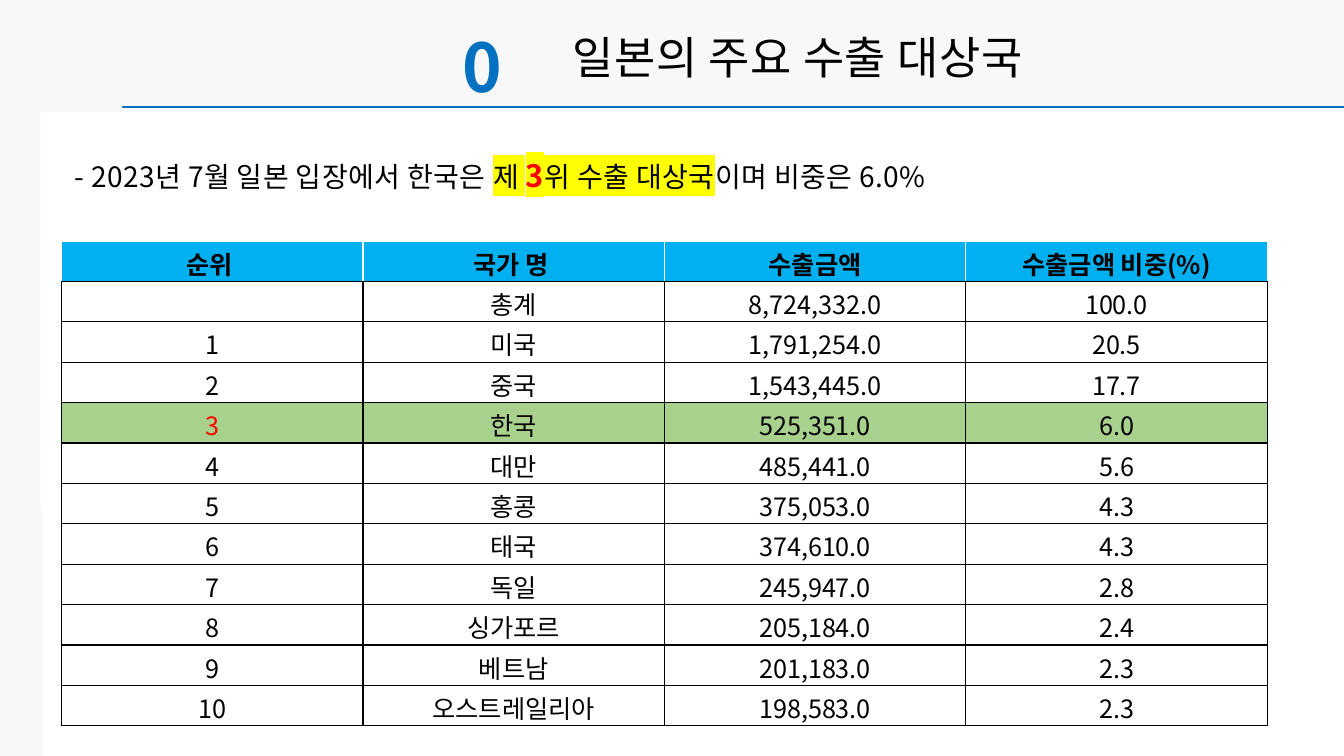
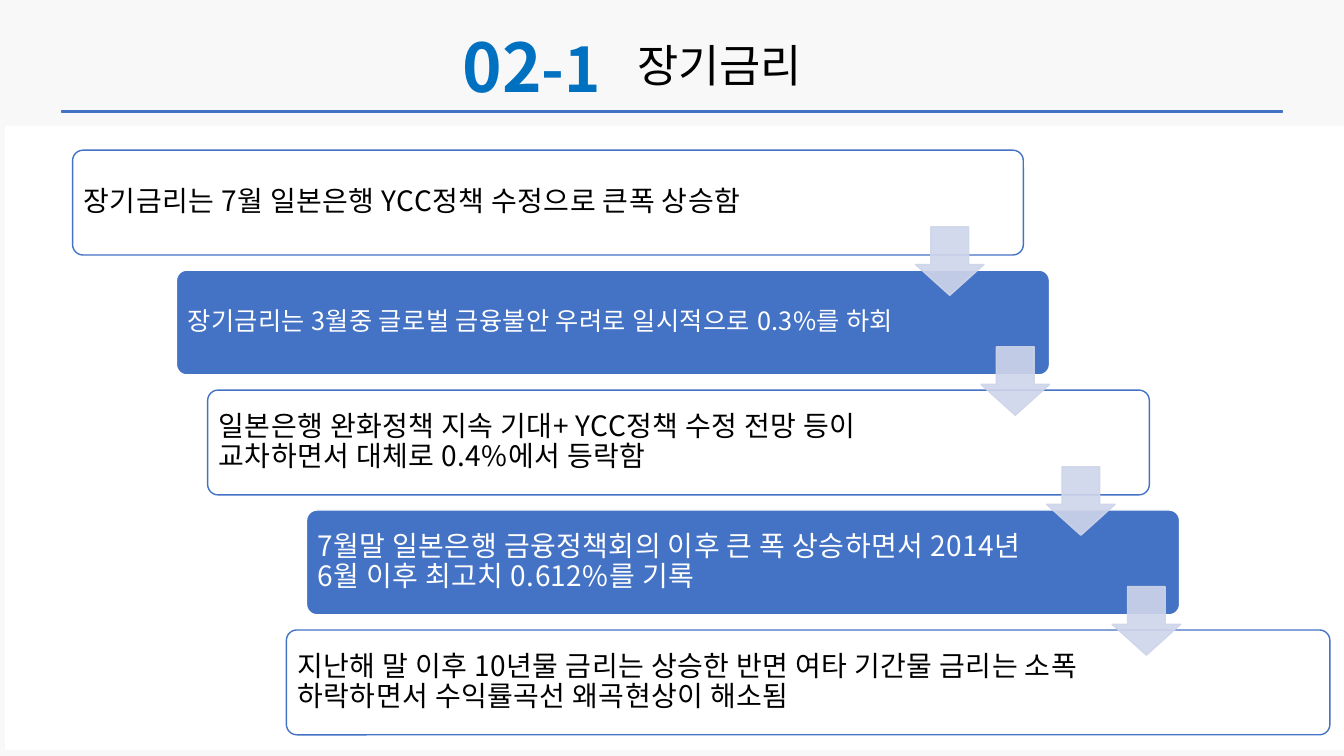
from lxml import etree
from pptx import Presentation
from pptx.dml.color import RGBColor
from pptx.enum.shapes import MSO_SHAPE as Preset
from pptx.enum.text import MSO_ANCHOR as Anchor, PP_ALIGN as Align
from pptx.oxml.ns import qn
from pptx.util import Inches, Pt

FONT = "Noto Sans CJK KR"
COLORS = {
    "backdrop": "F8F8F8", "panel": "FFFFFF", "text": "000000", "number": "0070C0",
    "blue": "4472C4", "arrow": "CFD5EA", "alert": "FF0000", "marker": "FFFF00",
    "header": "00B0F0", "korea": "A9D18E",
}

# Content
EXPORT_SUMMARY = [
    ("- 2023년 7월 일본 입장에서 한국은 ", {}),
    ("제 ", {"highlight": "marker"}),
    ("3", {"size": 22, "color": "alert", "bold": True, "highlight": "marker"}),
    ("위 수출 대상국", {"highlight": "marker"}),
    ("이며 비중은 6.0%", {}),
]
EXPORT_HEADER = ("순위 ", "국가 명 ", "수출금액", "수출금액 비중(%)")
EXPORT_ROWS = [
    ("", "총계", "8,724,332.0", "100.0"),
    ("1", "미국", "1,791,254.0", "20.5"),
    ("2", "중국", "1,543,445.0", "17.7"),
    ("3", "한국", "525,351.0", "6.0"),
    ("4", "대만", "485,441.0", "5.6"),
    ("5", "홍콩", "375,053.0", "4.3"),
    ("6", "태국", "374,610.0", "4.3"),
    ("7", "독일", "245,947.0", "2.8"),
    ("8", "싱가포르", "205,184.0", "2.4"),
    ("9", "베트남", "201,183.0", "2.3"),
    ("10", "오스트레일리아", "198,583.0", "2.3"),
]
# Each step: left, width, text width, text size, text
RATE_STEPS = [
    (0.72, 9.43, 8.07, 20, "장기금리는 7월 일본은행 YCC정책 수정으로 큰폭 상승함"),
    (1.75, 8.66, 7.27, 18, "장기금리는 3월중 글로벌 금융불안 우려로 일시적으로 0.3%를 하회"),
    (2.06, 9.34, 7.85, 20,
     "일본은행 완화정책 지속 기대+ YCC정책 수정 전망 등이 교차하면서 대체로 0.4%에서 등락함"),
    (3.04, 8.66, 7.27, 20,
     "7월말 일본은행 금융정책회의 이후 큰 폭 상승하면서 2014년 6월 이후 최고치 0.612%를 기록"),
    (2.84, 10.35, 8.7, 20,
     "지난해 말 이후 10년물 금리는 상승한 반면 여타 기간물 금리는 소폭 하락하면서 "
     "수익률곡선 왜곡현상이 해소됨"),
]
STEP_TOP, STEP_PITCH, STEP_HEIGHT = 1.49, 1.19, 1.04
ARROW_LEFT, ARROW_TOP, ARROW_SHIFT, ARROW_SIZE = 9.08, 2.25, 0.65, 0.68
BODY_TRACKING, TITLE_TRACKING = 0.28, 0.45
TABLE_HEIGHT = 4.81


def rgb(name):
    return RGBColor.from_string(COLORS[name])


def add_color(parent, name):
    fill = etree.SubElement(parent, qn("a:solidFill"))
    etree.SubElement(fill, qn("a:srgbClr")).set("val", COLORS[name])


def write(frame, spans, size=20, color="text", bold=False, align=Align.LEFT, tracking=0,
          spacing=None, anchor=Anchor.TOP, insets=(0.1, 0.05, 0.1, 0.05)):
    """Fill a text frame with one paragraph of (text, format) spans."""
    frame.word_wrap = True
    frame.vertical_anchor = anchor
    (frame.margin_left, frame.margin_top,
     frame.margin_right, frame.margin_bottom) = map(Inches, insets)
    para = frame.paragraphs[0]
    para.alignment = align
    if spacing:
        para.line_spacing = spacing
    for text, style in [(spans, {})] if isinstance(spans, str) else spans:
        span = para.add_run()
        span.text = text
        span.font.size = Pt(style.get("size", size))
        span.font.bold = style.get("bold", bold)
        span.font.color.rgb = rgb(style.get("color", color))
        span.font.name = FONT
        properties = span.font._element
        if tracking:
            properties.set("spc", str(round(tracking * 100)))
        latin = properties.find(qn("a:latin"))
        latin.addnext(etree.Element(qn("a:ea"), typeface=FONT))
        if "highlight" in style:
            highlight = etree.Element(qn("a:highlight"))
            etree.SubElement(highlight, qn("a:srgbClr")).set("val", COLORS[style["highlight"]])
            latin.addprevious(highlight)


def add_text(page, left, top, width, height, spans, **style):
    box = page.shapes.add_textbox(*map(Inches, (left, top, width, height)))
    write(box.text_frame, spans, **style)


def add_preset(page, preset, left, top, width, height, fill, line=None):
    shape = page.shapes.add_shape(preset, *map(Inches, (left, top, width, height)))
    shape.shadow.inherit = False
    shape.fill.solid()
    shape.fill.fore_color.rgb = rgb(fill)
    if line:
        shape.line.color.rgb = rgb(line)
        shape.line.width = Pt(1)
    else:
        shape.line.fill.background()
    return shape


def add_page(deck, number, title, title_at, rule_at, rule_color, panels, tracking=0):
    """Add a slide with the shared backdrop, panels, rule and numbered title."""
    page = deck.slides.add_slide(deck.slide_layouts[6])
    page.background.fill.solid()
    page.background.fill.fore_color.rgb = rgb("backdrop")
    for panel_at in panels:
        add_preset(page, Preset.RECTANGLE, *panel_at, "panel")
    add_preset(page, Preset.RECTANGLE, *rule_at, 12.11, 0.01, rule_color, rule_color)
    add_text(page, *title_at, 5.2, 0.64, title, size=32, tracking=tracking)
    add_text(page, 4.49, 0.2, 1.85, 0.91, number, size=48, color="number", bold=True)
    return page


def style_cell(cell, text, fill, color="text", header=False):
    cell.fill.solid()
    cell.fill.fore_color.rgb = rgb(fill)
    write(cell.text_frame, text, size=18, color=color, bold=header, align=Align.CENTER)
    cell.margin_top, cell.margin_bottom = Inches(0.03), 0
    cell.vertical_anchor = Anchor.BOTTOM
    properties = cell._tc.get_or_add_tcPr()
    for index, side in enumerate(("lnL", "lnR", "lnT", "lnB")):
        border = etree.Element(qn("a:" + side), w=str(Pt(1)))
        add_color(border, "panel" if header and side != "lnB" else "text")
        properties.insert(index, border)


def build_exports(deck):
    panels = [(0.4, 1.11, 12.93, 3.95), (0.42, 5, 12.91, 2.5)]
    page = add_page(deck, "0", "일본의 주요 수출 대상국", (5.58, 0.25),
                    (1.22, 1.06), "number", panels, TITLE_TRACKING)
    add_text(page, 0.61, 1.47, 12.53, 0.72, EXPORT_SUMMARY, spacing=0.9,
             tracking=BODY_TRACKING, insets=(0.13,) * 4)

    # Ranking table
    rows = [EXPORT_HEADER] + EXPORT_ROWS
    table = page.shapes.add_table(len(rows), len(EXPORT_HEADER), Inches(0.61), Inches(2.39),
                                  Inches(11.96), Inches(TABLE_HEIGHT)).table
    table.horz_banding = False
    for row_index, values in enumerate(rows):
        table.rows[row_index].height = Inches(TABLE_HEIGHT / len(rows))
        header, korea = row_index == 0, values[1] == "한국"
        fill = "header" if header else "korea" if korea else "panel"
        for column, value in enumerate(values):
            color = "alert" if korea and column == 0 else "text"
            style_cell(table.cell(row_index, column), value, fill, color, header)


def build_rates(deck):
    number = [("02", {}), ("-1", {"size": 44})]
    page = add_page(deck, number, "장기금리", (6.22, 0.33),
                    (0.61, 1.1), "blue", [(0.05, 1.25, 13.28, 6.19)])

    # Staircase of steps, alternating white and blue
    for index, (left, width, text_width, size, text) in enumerate(RATE_STEPS):
        fill, ink = ("blue", "panel") if index % 2 else ("panel", "text")
        line = "panel" if index % 2 else "blue"
        step = add_preset(page, Preset.ROUNDED_RECTANGLE, left, STEP_TOP + index * STEP_PITCH,
                          width, STEP_HEIGHT, fill, line)
        step.adjustments[0] = 0.1
        write(step.text_frame, text, size=size, color=ink, spacing=0.9, anchor=Anchor.MIDDLE,
              tracking=BODY_TRACKING, insets=(0.08, 0.08, width - text_width + 0.02, 0.08))

    # Translucent arrows between steps
    for index in range(len(RATE_STEPS) - 1):
        arrow = add_preset(page, Preset.DOWN_ARROW, ARROW_LEFT + index * ARROW_SHIFT,
                           ARROW_TOP + index * STEP_PITCH, ARROW_SIZE, ARROW_SIZE,
                           "arrow", "arrow")
        arrow.adjustments[0], arrow.adjustments[1] = 0.55, 0.45
        for color in arrow._element.spPr.iter(qn("a:srgbClr")):
            etree.SubElement(color, qn("a:alpha")).set("val", "90000")


def main():
    deck = Presentation()
    deck.slide_width, deck.slide_height = Inches(13.33), Inches(7.5)
    build_exports(deck)
    build_rates(deck)
    deck.save("out.pptx")


if __name__ == "__main__":
    main()
